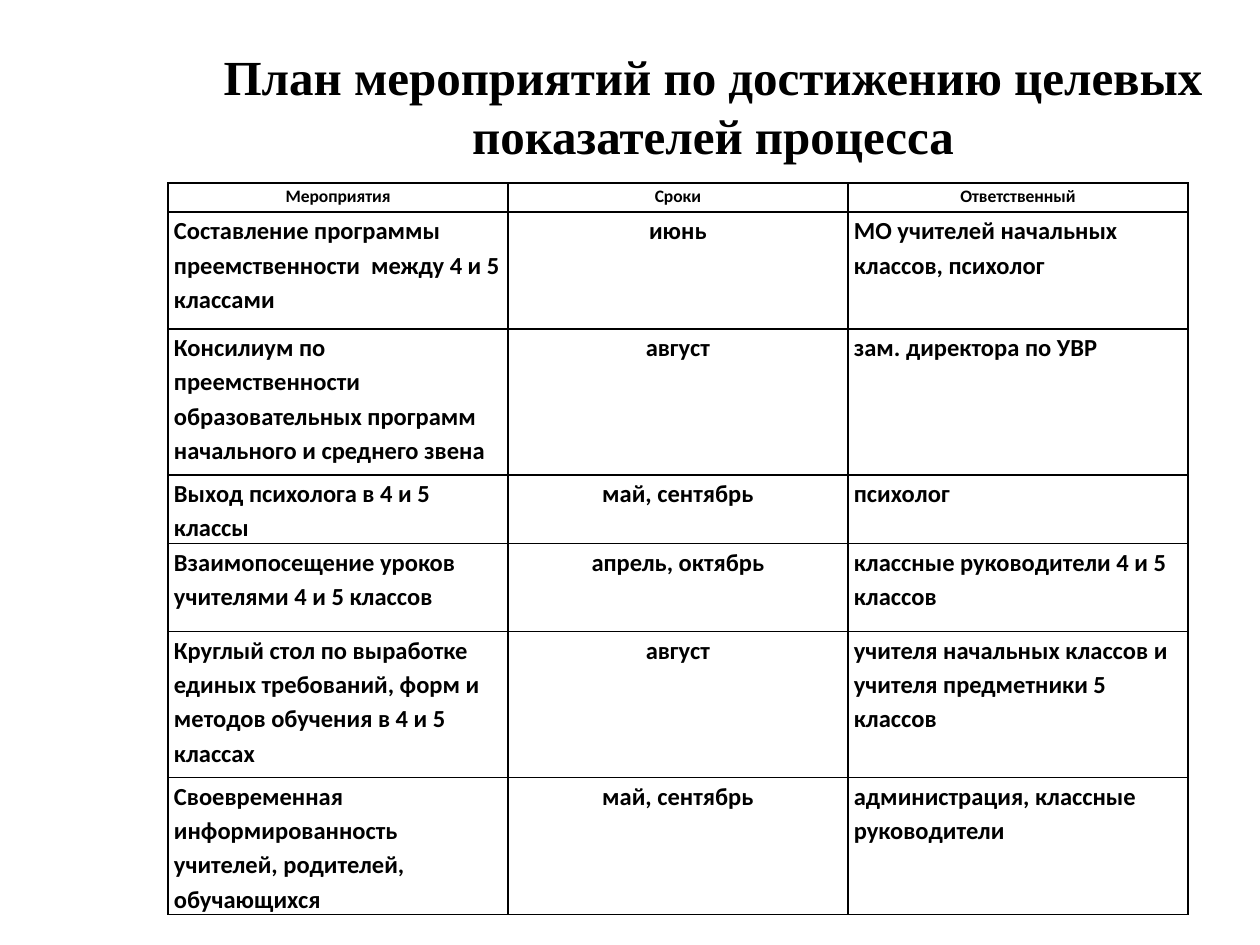
"""Build a slide with the action plan table for reaching the process targets."""
from dataclasses import dataclass

from lxml.etree import SubElement
from pptx import Presentation
from pptx.dml.color import RGBColor
from pptx.enum.text import MSO_ANCHOR, PP_ALIGN
from pptx.oxml.ns import qn
from pptx.util import Emu, Pt

TITLE = "План мероприятий по достижению целевых показателей процесса"
HEADER = ("Мероприятия", "Сроки", "Ответственный")
ACTIONS = [
    ("Составление программы преемственности  между 4 и 5 классами", "июнь",
     "МО учителей начальных классов, психолог"),
    ("Консилиум по преемственности образовательных программ начального и среднего звена",
     "август", "зам. директора по УВР"),
    ("Выход психолога в 4 и 5 классы", "май, сентябрь", "психолог"),
    ("Взаимопосещение уроков учителями 4 и 5 классов", "апрель, октябрь",
     "классные руководители 4 и 5 классов"),
    ("Круглый стол по выработке единых требований, форм и методов обучения в 4 и 5 классах",
     "август", "учителя начальных классов и учителя предметники 5 классов"),
    ("Своевременная информированность учителей, родителей, обучающихся",
     "май, сентябрь", "администрация, классные руководители"),
]
ROW_HEIGHTS = (29, 117, 146, 58, 88, 146, 117)
COLUMN_WIDTH = 340
DATE_COLUMN = 1


@dataclass(frozen=True)
class Theme:
    """Colours, fonts and type sizes of the slide."""

    ink: str = "000000"
    title_font: str = "Times New Roman"
    body_font: str = "Calibri"
    title_size: int = 28
    header_size: int = 10
    body_size: int = 14
    line_spacing: float = 1.15
    border: int = 1


def px(length):
    """Turn pixels into EMU."""
    return Emu(round(length * 914400 / 126))


class SlideBuilder:
    """Hold the theme and the current slide and add elements to it."""

    def __init__(self, slide, theme):
        """Keep the slide and the theme."""
        self.slide = slide
        self.theme = theme

    def format_paragraph(self, paragraph, font_name, size, alignment):
        """Align a paragraph and format its runs."""
        paragraph.alignment = alignment
        for run in paragraph.runs:
            run.font.name = font_name
            run.font.size = Pt(size)
            run.font.bold = True
            run.font.color.rgb = RGBColor.from_string(self.theme.ink)

    def title(self, text, left, top, width, height):
        """Move the title placeholder and fill it."""
        shape = self.slide.shapes.title
        shape.left, shape.top = px(left), px(top)
        shape.width, shape.height = px(width), px(height)
        frame = shape.text_frame
        frame.text = text
        frame.word_wrap = True
        frame.vertical_anchor = MSO_ANCHOR.MIDDLE
        self.format_paragraph(frame.paragraphs[0], self.theme.title_font,
                              self.theme.title_size, PP_ALIGN.CENTER)

    def table(self, rows, left, top, column_width, row_heights):
        """Add a bordered table whose first row is the header."""
        columns = len(rows[0])
        shape = self.slide.shapes.add_table(
            len(rows), columns, px(left), px(top),
            px(column_width * columns), px(sum(row_heights)))
        table = shape.table
        table.first_row = table.horz_banding = False
        for column in table.columns:
            column.width = px(column_width)
        for row_index, texts in enumerate(rows):
            table.rows[row_index].height = px(row_heights[row_index])
            is_header = row_index == 0
            size = self.theme.header_size if is_header else self.theme.body_size
            for column_index, text in enumerate(texts):
                centred = is_header or column_index == DATE_COLUMN
                alignment = PP_ALIGN.CENTER if centred else PP_ALIGN.LEFT
                self.cell(table.cell(row_index, column_index), text, size, alignment)

    def cell(self, cell, text, size, alignment):
        """Fill one table cell and draw its borders."""
        cell.margin_left = cell.margin_right = px(6)
        cell.margin_top = cell.margin_bottom = 0
        cell.vertical_anchor = MSO_ANCHOR.TOP
        cell.text_frame.text = text
        paragraph = cell.text_frame.paragraphs[0]
        paragraph.line_spacing = self.theme.line_spacing
        self.format_paragraph(paragraph, self.theme.body_font, size, alignment)
        properties = cell._tc.get_or_add_tcPr()
        for side in ("a:lnL", "a:lnR", "a:lnT", "a:lnB"):
            line = SubElement(properties, qn(side), w=str(Pt(self.theme.border)))
            fill = SubElement(line, qn("a:solidFill"))
            SubElement(fill, qn("a:srgbClr"), val=self.theme.ink)
        cell.fill.background()


def main():
    """Build and save the presentation."""
    presentation = Presentation()
    presentation.slide_width, presentation.slide_height = px(1260), px(945)
    slide = presentation.slides.add_slide(presentation.slide_layouts[5])
    builder = SlideBuilder(slide, Theme())
    builder.title(TITLE, 146, 27, 1134, 157)
    builder.table([HEADER, *ACTIONS], 168, 183, COLUMN_WIDTH, ROW_HEIGHTS)
    presentation.save("out.pptx")


if __name__ == "__main__":
    main()
